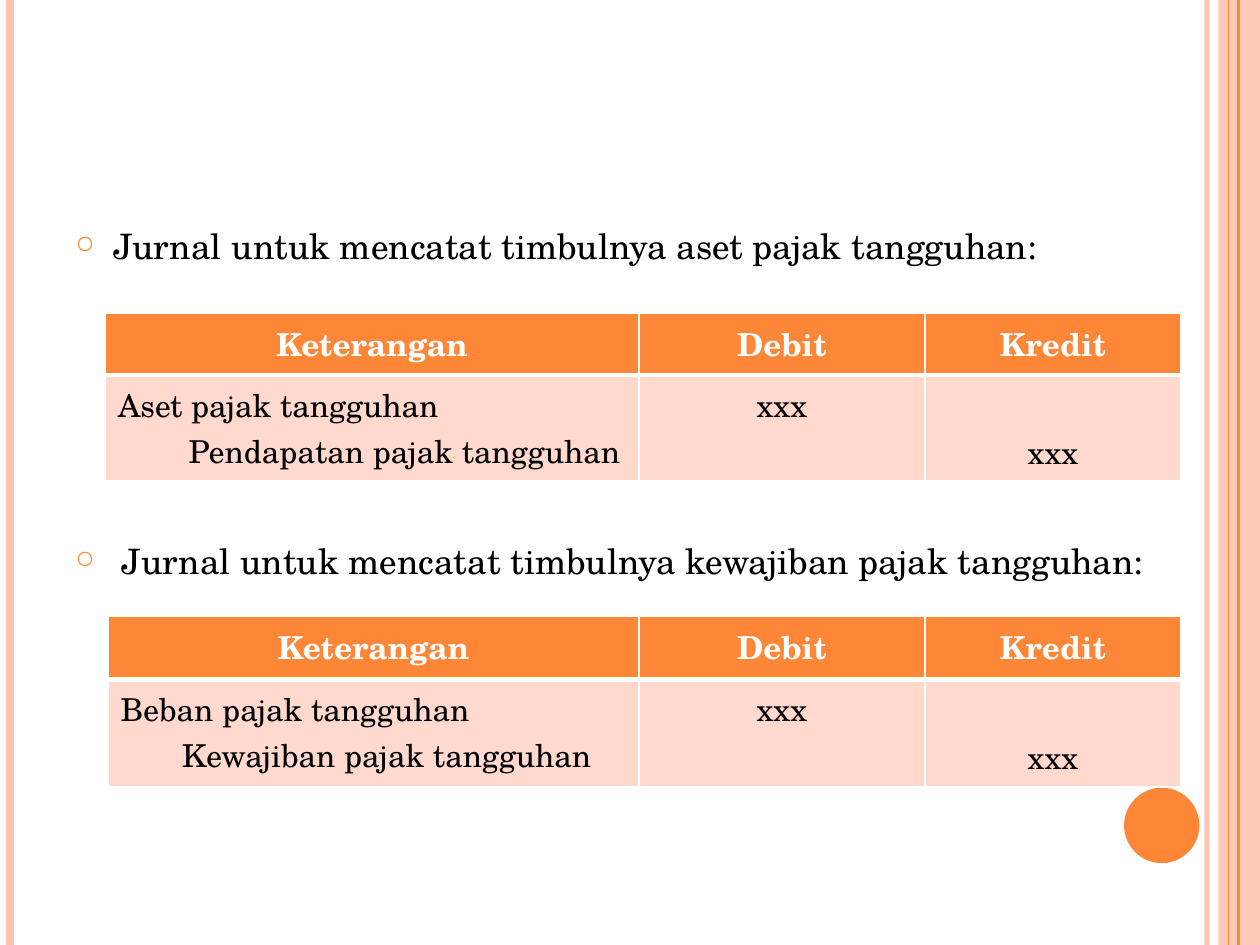
"""Build a slide with two journal tables for deferred tax."""
from lxml.etree import SubElement
from pptx import Presentation
from pptx.dml.color import RGBColor
from pptx.enum.shapes import MSO_CONNECTOR, MSO_SHAPE
from pptx.enum.text import MSO_ANCHOR as Anchor, PP_ALIGN as Align
from pptx.oxml.ns import qn
from pptx.util import Cm, Pt

THEME = {
    "font": "TeX Gyre Schola", "bullet_size": 20, "table_size": 18,
    "orange": "FE8637", "peach": "FEC3AE", "pale": "FFD9CE",
    "white": "FFFFFF", "black": "000000",
}
SLIDE_WIDTH, SLIDE_HEIGHT = 25.4, 19.05
HEADERS = ["Keterangan", "Debit", "Kredit"]
AMOUNT = "xxx"
TABLE_RIGHT = 23.81
AMOUNT_WIDTHS = [5.77, 5.16]
JOURNALS = [
    {"heading": "Jurnal untuk mencatat timbulnya aset pajak tangguhan:",
     "heading_top": 4.53, "heading_indent": 0.76,
     "debit": "Aset pajak tangguhan", "credit": "Pendapatan pajak tangguhan",
     "credit_indent": 1.43, "left": 2.12, "top": 6.32, "rows": [1.24, 2.14]},
    {"heading": "Jurnal untuk mencatat timbulnya kewajiban pajak tangguhan:",
     "heading_top": 10.88, "heading_indent": 0.94,
     "debit": "Beban pajak tangguhan", "credit": "Kewajiban pajak tangguhan",
     "credit_indent": 1.23, "left": 2.18, "top": 12.43, "rows": [1.27, 2.16]},
]
EDGE_LINES = [(24.33, "peach", 3, 93), (0.2, "peach", 4.5, 100)]
BAND_LINES = [(24.97, "orange", 1.5, 100), (24.77, "orange", 0.75, 100)]
BAND_LEFT = 24.56
CIRCLE = (22.66, 15.88, 1.52, 1.52)


def color(name):
    return RGBColor.from_string(THEME[name])


def set_opacity(element, percent):
    if percent < 100:
        value = next(element.iter(qn("a:srgbClr")))
        SubElement(value, qn("a:alpha"), val=str(percent * 1000))


def add_lines(slide, lines):
    for x, name, width, opacity in lines:
        line = slide.shapes.add_connector(
            MSO_CONNECTOR.STRAIGHT, Cm(x), Cm(0), Cm(x), Cm(SLIDE_HEIGHT))
        line.line.color.rgb = color(name)
        line.line.width = Pt(width)
        properties = line.element.spPr
        set_opacity(properties, opacity)
        SubElement(properties, qn("a:effectLst"))


def add_plain_shape(slide, kind, box, name, opacity=100):
    shape = slide.shapes.add_shape(kind, *map(Cm, box))
    shape.shadow.inherit = False
    shape.fill.solid()
    shape.fill.fore_color.rgb = color(name)
    shape.line.fill.background()
    set_opacity(shape.element.spPr, opacity)


def write(paragraph, text, *, size, name="black", bold=False, align=Align.LEFT,
          indent=0, bullet=None):
    paragraph.alignment = align
    run = paragraph.add_run()
    run.text = text
    run.font.name = THEME["font"]
    run.font.size = Pt(size)
    run.font.bold = bold
    run.font.color.rgb = color(name)
    properties = paragraph._p.get_or_add_pPr()
    properties.set("marL", str(Cm(indent)))
    if bullet:
        properties.set("indent", str(-Cm(indent)))
        bullet_color = SubElement(properties, qn("a:buClr"))
        SubElement(bullet_color, qn("a:srgbClr"), val=THEME["orange"])
        SubElement(properties, qn("a:buSzPct"), val="70000")
        SubElement(properties, qn("a:buChar"), char=bullet)


def format_cell(cell, fill, top, bottom):
    properties = cell._tc.get_or_add_tcPr()
    for side, width in zip("LRTB", (1, 1, top, bottom)):
        border = SubElement(properties, qn(f"a:ln{side}"), w=str(Pt(width)))
        solid = SubElement(border, qn("a:solidFill"))
        SubElement(solid, qn("a:srgbClr"), val=THEME["white"])
    cell.fill.solid()
    cell.fill.fore_color.rgb = color(fill)


def add_heading(slide, journal):
    box = slide.shapes.add_textbox(
        Cm(1.27), Cm(journal["heading_top"]), Cm(22.94), Cm(1.1))
    frame = box.text_frame
    frame.word_wrap = True
    frame.margin_top = frame.margin_bottom = 0
    write(frame.paragraphs[0], journal["heading"], size=THEME["bullet_size"],
          indent=journal["heading_indent"], bullet="○")


def add_journal_table(slide, journal):
    width = TABLE_RIGHT - journal["left"]
    widths = [width - sum(AMOUNT_WIDTHS), *AMOUNT_WIDTHS]
    table = slide.shapes.add_table(
        2, 3, Cm(journal["left"]), Cm(journal["top"]),
        Cm(width), Cm(sum(journal["rows"]))).table
    for column, column_width in zip(table.columns, widths):
        column.width = Cm(column_width)
    for row, height in zip(table.rows, journal["rows"]):
        row.height = Cm(height)
    size = THEME["table_size"]
    for index, header in enumerate(HEADERS):
        head, body = table.cell(0, index), table.cell(1, index)
        format_cell(head, "orange", 1, 3)
        format_cell(body, "pale", 3, 1)
        write(head.text_frame.paragraphs[0], header, size=size, name="white",
              bold=True, align=Align.CENTER)
        if index:
            write(body.text_frame.paragraphs[0], AMOUNT, size=size,
                  align=Align.CENTER)
    accounts = table.cell(1, 0).text_frame
    write(accounts.paragraphs[0], journal["debit"], size=size)
    write(accounts.add_paragraph(), journal["credit"], size=size,
          indent=journal["credit_indent"])
    table.cell(1, 2).vertical_anchor = Anchor.BOTTOM


def main():
    presentation = Presentation()
    presentation.slide_width = Cm(SLIDE_WIDTH)
    presentation.slide_height = Cm(SLIDE_HEIGHT)
    slide = presentation.slides.add_slide(presentation.slide_layouts[6])
    add_lines(slide, EDGE_LINES)
    band = (BAND_LEFT, 0, SLIDE_WIDTH - BAND_LEFT, SLIDE_HEIGHT)
    add_plain_shape(slide, MSO_SHAPE.RECTANGLE, band, "peach", 87)
    add_lines(slide, BAND_LINES)
    add_plain_shape(slide, MSO_SHAPE.OVAL, CIRCLE, "orange")
    for journal in JOURNALS:
        add_heading(slide, journal)
        add_journal_table(slide, journal)
    presentation.save("out.pptx")


if __name__ == "__main__":
    main()
